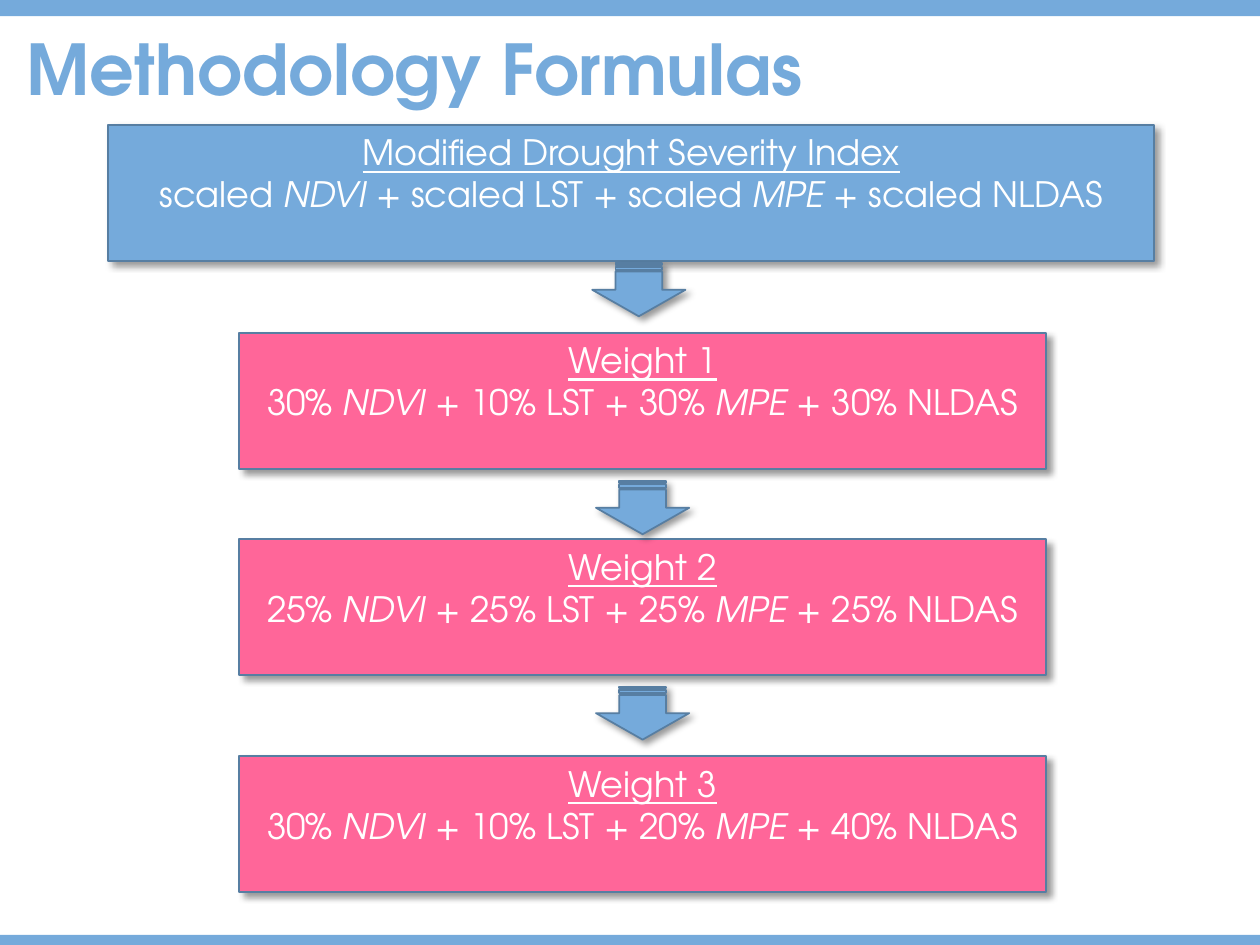
from lxml.etree import SubElement
from pptx import Presentation
from pptx.dml.color import RGBColor
from pptx.enum.shapes import MSO_SHAPE
from pptx.enum.text import MSO_ANCHOR, PP_ALIGN
from pptx.oxml.ns import qn
from pptx.util import Pt

FONT = "TeX Gyre Adventor"
COLORS = {"blue": "75AADB", "outline": "577EA2", "pink": "FF6699",
          "white": "FFFFFF", "shadow": "000000"}
PAGE_WIDTH, PAGE_HEIGHT = 720, 540
MEASURES = ["NDVI", "LST", "MPE", "NLDAS"]
ITALIC_MEASURES = {"NDVI", "MPE"}
BOX_HEIGHT = 77.76
WEIGHTS = [
    ("Weight 1", 190.08, ["30%", "10%", "30%", "30%"]),
    ("Weight 2", 308.16, ["25%", "25%", "25%", "25%"]),
    ("Weight 3", 432, ["30%", "10%", "20%", "40%"]),
]
ARROW_CENTERS = [(365.04, 165.6), (367.2, 290.16), (367.2, 407.52)]


def color(name):
    return RGBColor.from_string(COLORS[name])


def style_font(font, size, color_name):
    font.name = FONT
    font.size = Pt(size)
    font.color.rgb = color(color_name)


def add_shadow(shape):
    """Cast a soft shadow down and to the right."""
    shape.shadow.inherit = False
    effects = shape._element.spPr.find(qn("a:effectLst"))
    shadow = SubElement(effects, qn("a:outerShdw"), blurRad=str(Pt(4)),
                        dist=str(Pt(3)), dir="2700000", algn="tl",
                        rotWithShape="0")
    tint = SubElement(shadow, qn("a:srgbClr"), val=COLORS["shadow"])
    SubElement(tint, qn("a:alpha"), val="40000")


def add_outlined(page, preset, left, top, width, height, fill):
    shape = page.shapes.add_shape(preset, Pt(left), Pt(top), Pt(width), Pt(height))
    shape.fill.solid()
    shape.fill.fore_color.rgb = color(fill)
    shape.line.color.rgb = color("outline")
    shape.line.width = Pt(1)
    add_shadow(shape)
    return shape


def add_band(page, top, height):
    band = page.shapes.add_shape(MSO_SHAPE.RECTANGLE, 0, Pt(top),
                                 Pt(PAGE_WIDTH), Pt(height))
    band.fill.solid()
    band.fill.fore_color.rgb = color("blue")
    band.line.fill.background()
    band.shadow.inherit = False


def add_title(page, text, left, top, width, height):
    title = page.shapes.title
    title.left, title.top = Pt(left), Pt(top)
    title.width, title.height = Pt(width), Pt(height)
    frame = title.text_frame
    frame.vertical_anchor = MSO_ANCHOR.BOTTOM
    frame.word_wrap = True
    para = frame.paragraphs[0]
    para.text = text
    para.alignment = PP_ALIGN.LEFT
    para.line_spacing = 0.9
    style_font(para.font, 40, "blue")
    para.font.bold = True


def write_formula(para, factors):
    """Write the sum of each factor and its measure."""
    for index, (factor, measure) in enumerate(zip(factors, MEASURES)):
        plus = " + " if index else ""
        para.add_run().text = f"{plus}{factor} "
        span = para.add_run()
        span.text = measure
        span.font.italic = measure in ITALIC_MEASURES


def add_formula_box(page, heading, factors, left, top, width, height, fill):
    box = add_outlined(page, MSO_SHAPE.RECTANGLE, left, top, width, height, fill)
    frame = box.text_frame
    frame.word_wrap = True
    frame.vertical_anchor = MSO_ANCHOR.TOP
    head, formula = frame.paragraphs[0], frame.add_paragraph()
    head.text = heading
    write_formula(formula, factors)
    for para in (head, formula):
        para.alignment = PP_ALIGN.CENTER
        style_font(para.font, 20, "white")
    head.font.underline = True


def add_down_arrow(page, center_x, center_y, length=30.24, breadth=53.28):
    arrow = add_outlined(page, MSO_SHAPE.STRIPED_RIGHT_ARROW,
                         center_x - length / 2, center_y - breadth / 2,
                         length, breadth, "blue")
    arrow.rotation = 90


def main():
    deck = Presentation()
    deck.slide_width, deck.slide_height = Pt(PAGE_WIDTH), Pt(PAGE_HEIGHT)
    page = deck.slides.add_slide(deck.slide_layouts[5])
    add_band(page, 0, 9.2)
    add_band(page, 534.24, 5.76)
    add_title(page, "Methodology Formulas", 7.92, -37.44, 529.92, 104.4)
    add_formula_box(page, "Modified Drought Severity Index",
                    ["scaled"] * len(MEASURES),
                    61.92, 71.28, 597.6, BOX_HEIGHT, "blue")
    for heading, top, factors in WEIGHTS:
        add_formula_box(page, heading, factors,
                        136.8, top, 460.8, BOX_HEIGHT, "pink")
    for center_x, center_y in ARROW_CENTERS:
        add_down_arrow(page, center_x, center_y)
    deck.save("out.pptx")


if __name__ == "__main__":
    main()
